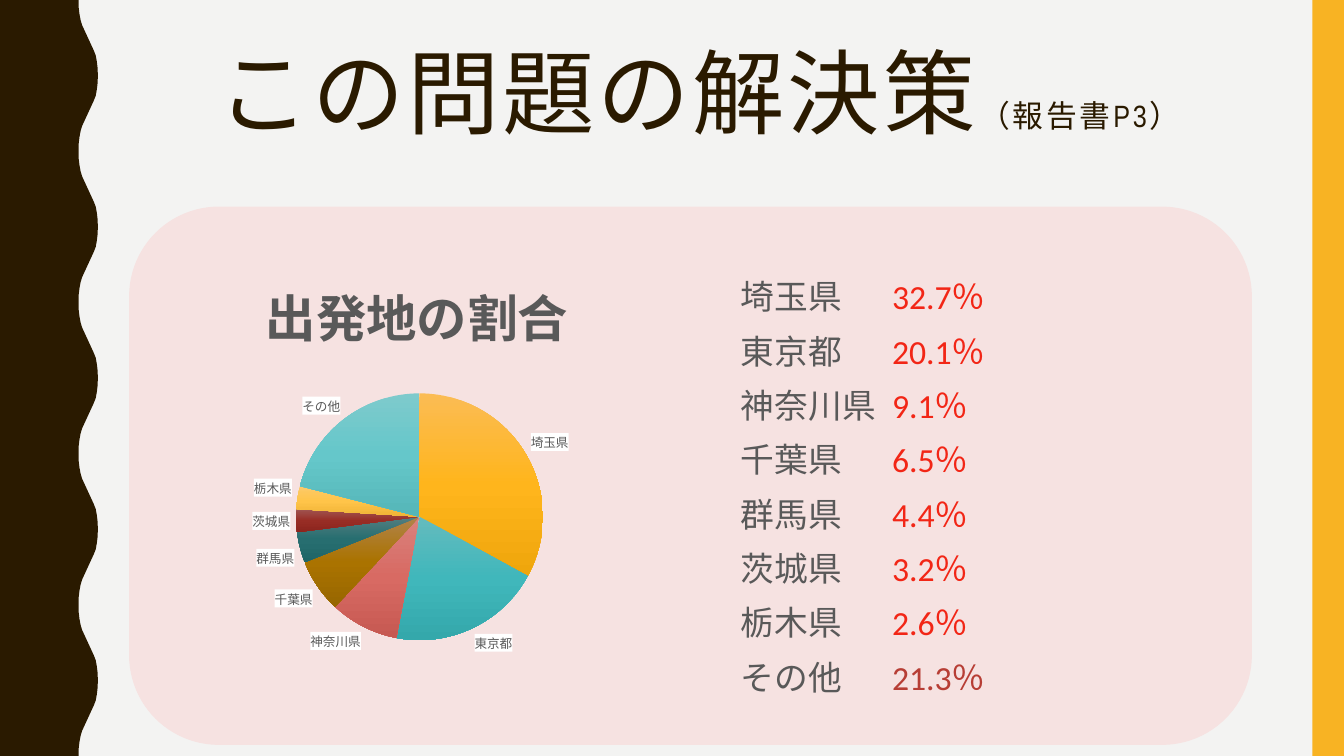
"""Build the slide on departure points: a pie chart beside a list of shares."""
from copy import deepcopy
from typing import NamedTuple

from lxml import etree
from pptx import Presentation
from pptx.chart.data import CategoryChartData
from pptx.dml.color import RGBColor
from pptx.enum.chart import XL_CHART_TYPE, XL_LABEL_POSITION
from pptx.enum.shapes import MSO_SHAPE
from pptx.enum.text import MSO_ANCHOR, MSO_AUTO_SIZE, PP_ALIGN
from pptx.oxml import parse_xml
from pptx.oxml.ns import nsdecls, qn
from pptx.util import Pt

PIE = XL_CHART_TYPE.PIE
OUTER = XL_LABEL_POSITION.OUTSIDE_END
RECT = MSO_SHAPE.RECTANGLE
ROUND = MSO_SHAPE.ROUNDED_RECTANGLE
TOP = MSO_ANCHOR.TOP
FIXED = MSO_AUTO_SIZE.NONE
CENTER = PP_ALIGN.CENTER

PAPER = RGBColor(0xF3, 0xF3, 0xF2)
BROWN = RGBColor(0x2A, 0x1A, 0x00)
GOLD = RGBColor(0xF8, 0xB3, 0x23)
PINK = RGBColor(0xF6, 0xE2, 0xE1)
GREY = RGBColor(0x59, 0x59, 0x59)
RED = RGBColor(0xF2, 0x26, 0x16)
BRICK = RGBColor(0xB7, 0x3E, 0x35)

WIDE, HIGH = 960, 540
WAVES, HALF = 5, 54
CURVE = [(56.2, 0), (56.2, 5), (56.8, 10), (57.6, 14.4), (58.7, 18),
         (67, 36), (68.4, 39.6), (69.2, 44), (69.8, 49), (69.9, HALF)]


class Box(NamedTuple):
    """Place and size in points."""
    left: float
    top: float
    width: float
    height: float


class Panel(NamedTuple):
    """A plain filled shape."""
    kind: MSO_SHAPE
    box: Box
    color: RGBColor


class Share(NamedTuple):
    """One departure point with its share and slice shades."""
    name: str
    value: float
    shades: tuple[str, str, str]
    color: RGBColor = RED


PANELS = [
    Panel(RECT, Box(937.5, 0, 22.5, HIGH), GOLD),
    Panel(ROUND, Box(92.2, 147.6, 802, 384.5), PINK),
]
SHARES = [
    Share("埼玉県", 32.7, ("FBBC54", "FFB51C", "EFA60C")),
    Share("東京都", 20.1, ("64BBBE", "40B7BB", "34A8AB")),
    Share("神奈川県", 9.1, ("D9827D", "D86A63", "C65952")),
    Share("千葉県", 6.5, ("B1834B", "AA7300", "976600")),
    Share("群馬県", 4.4, ("547E80", "276E70", "1F6566")),
    Share("茨城県", 3.2, ("A05653", "982D25", "8B241D")),
    Share("栃木県", 2.6, ("FCCA6B", "FFC449", "EFB335")),
    Share("その他", 21.3, ("7ECACC", "65C7CA", "55B6B8"), BRICK),
]


def place(slide, shape, box: Box) -> None:
    """Move and size a shape and bring it to the front."""
    shape.left, shape.top, shape.width, shape.height = map(Pt, box)
    slide.shapes._spTree.append(shape._element)


def paint(shape, color: RGBColor) -> None:
    """Give a shape a flat fill without line or shadow."""
    shape.shadow.inherit = False
    shape.fill.solid()
    shape.fill.fore_color.rgb = color
    shape.line.fill.background()


def add_wave(slide) -> None:
    """Draw the wavy band on the left edge."""
    bend = CURVE + [(x, 2 * HALF - y) for x, y in CURVE[-2::-1]]
    edge = [(x, y + 2 * HALF * turn) for turn in range(WAVES) for x, y in bend]
    form = slide.shapes.build_freeform(0, 0)
    form.add_line_segments(
        [(Pt(x), Pt(y)) for x, y in edge + [(0, HIGH)]], close=True)
    paint(form.convert_to_shape(), BROWN)


def add_panel(slide, panel: Panel) -> None:
    """Draw one filled shape."""
    shape = slide.shapes.add_shape(panel.kind, *map(Pt, panel.box))
    paint(shape, panel.color)


def add_title(slide) -> None:
    """Fill the title with its large and small parts."""
    title = slide.shapes.title
    place(slide, title, Box(98.6, 30.2, 801.4, 117.4))
    frame = title.text_frame
    frame.auto_size, frame.vertical_anchor = FIXED, TOP
    para = frame.paragraphs[0]
    para.alignment, para.line_spacing = CENTER, 0.9
    for text, size in (("この問題の解決策", 66), ("（報告書P3）", 22)):
        run = para.add_run()
        run.text = text
        run.font.size = Pt(size)
        run.font.name = "Arial Narrow"
        run.font.color.rgb = BROWN
        run.font._element.set("spc", "200")


def add_list(slide) -> None:
    """Fill the body with names and shares on a tab stop."""
    body = slide.placeholders[1]
    place(slide, body, Box(522, 190.8, 378, 328.3))
    frame = body.text_frame
    frame.auto_size, frame.vertical_anchor = FIXED, TOP
    for row, share in enumerate(SHARES):
        para = frame.add_paragraph() if row else frame.paragraphs[0]
        para.line_spacing, para.space_before = 1.1, Pt(7)
        para.font.size, para.font.name = Pt(24.1), "Calibri"
        props = para._p.get_or_add_pPr()
        props.set("marL", "0")
        props.set("indent", "0")
        none = parse_xml(f"<a:buNone {nsdecls('a')}/>")
        tabs = parse_xml(f'<a:tabLst {nsdecls("a")}>'
                         f'<a:tab pos="{Pt(126)}" algn="l"/></a:tabLst>')
        props.find(qn("a:defRPr")).addprevious(none)
        none.addnext(tabs)
        for text, color in ((share.name + "\t", GREY),
                            (f"{share.value}％", share.color)):
            run = para.add_run()
            run.text = text
            run.font.size, run.font.name = Pt(24.1), "Calibri"
            run.font.color.rgb = color


def layout(inner: bool, **spots: float):
    """Return a manual chart layout given as parts of the chart."""
    node = parse_xml(f"<c:layout {nsdecls('c')}><c:manualLayout/></c:layout>")
    marks = {"layoutTarget": "inner"} if inner else {}
    marks |= {"xMode": "edge", "yMode": "edge"} | spots
    for tag, value in marks.items():
        etree.SubElement(node[0], qn("c:" + tag)).set("val", str(value))
    return node


def add_pie(slide) -> None:
    """Draw the pie chart of departure points."""
    data = CategoryChartData()
    data.categories = [share.name for share in SHARES]
    data.add_series("出発地の割合", [int(share.value + 0.5) for share in SHARES])
    box = Box(100.4, 179.4, 394.6, 298.8)
    chart = slide.shapes.add_chart(PIE, *map(Pt, box), data).chart
    chart.font.name, chart.font.size = "Calibri", Pt(10)
    chart.has_legend = False
    head = chart.chart_title.text_frame
    head.text = "出発地の割合"
    font = head.paragraphs[0].font
    font.size, font.bold, font.name = Pt(36), True, "Calibri"
    font.color.rgb = GREY

    plot = chart.plots[0]
    plot.vary_by_categories = True
    plot.has_data_labels = True
    labels = plot.data_labels
    labels.show_category_name, labels.show_percentage = True, False
    labels.show_value, labels.position = False, OUTER
    labels.font.size, labels.font.name = Pt(9), "Calibri"
    labels.font.color.rgb = GREY
    back = parse_xml(f'<c:spPr {nsdecls("c", "a")}><a:solidFill>'
                     '<a:srgbClr val="FFFFFF"/></a:solidFill></c:spPr>')
    labels._element.find(qn("c:txPr")).addprevious(back)

    root = chart._chartSpace.chart
    for old in root.findall(".//" + qn("c:layout")):
        old.getparent().remove(old)
    root.find(qn("c:title")).find(qn("c:tx")).addnext(
        layout(False, x=0.21, y=0.03))
    root.plotArea.insert(0, layout(True, x=0.28, y=0.34, w=0.45, h=0.59))

    for row, share in enumerate(SHARES):
        fill = plot.series[0].points[row].format.fill
        fill.gradient()
        fill.gradient_angle = 270
        last = fill.gradient_stops[1]._gs
        last.addnext(deepcopy(last))
        for step, shade in enumerate(share.shades):
            stop = fill.gradient_stops[step]
            stop.position = step / 2
            stop.color.rgb = RGBColor.from_string(shade)


def main() -> None:
    """Build and save the slide."""
    deck = Presentation()
    deck.slide_width, deck.slide_height = Pt(WIDE), Pt(HIGH)
    slide = deck.slides.add_slide(deck.slide_layouts[1])
    slide.background.fill.solid()
    slide.background.fill.fore_color.rgb = PAPER
    add_wave(slide)
    for panel in PANELS:
        add_panel(slide, panel)
    add_title(slide)
    add_pie(slide)
    add_list(slide)
    deck.save("out.pptx")


if __name__ == "__main__":
    main()
